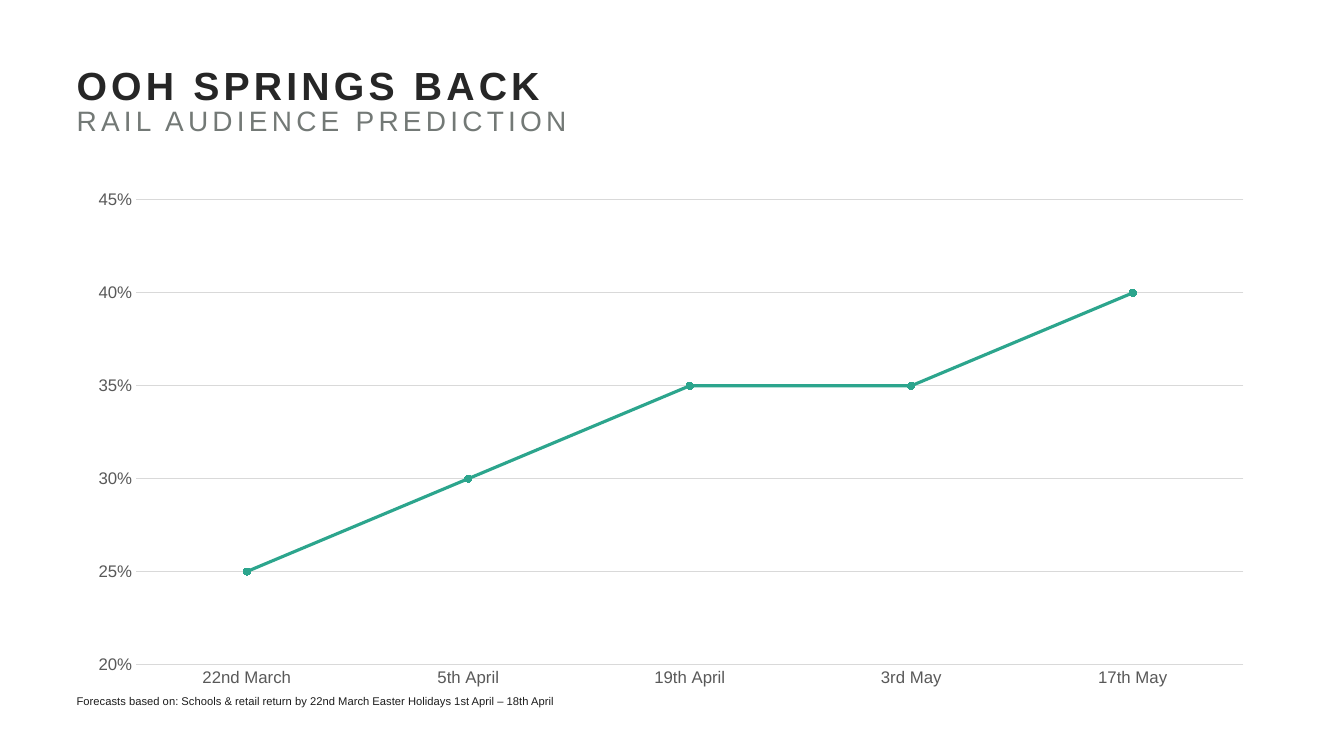
from lxml import etree
from pptx import Presentation
from pptx.chart.data import CategoryChartData
from pptx.dml.color import RGBColor
from pptx.enum.chart import XL_CHART_TYPE, XL_MARKER_STYLE, XL_TICK_MARK
from pptx.enum.text import MSO_ANCHOR, MSO_AUTO_SIZE, PP_ALIGN
from pptx.oxml import parse_xml
from pptx.oxml.ns import nsdecls, qn
from pptx.util import Inches, Pt

LINE_MARKERS = XL_CHART_TYPE.LINE_MARKERS
CIRCLE = XL_MARKER_STYLE.CIRCLE
NO_TICKS = XL_TICK_MARK.NONE
TOP = MSO_ANCHOR.TOP
NO_AUTOFIT = MSO_AUTO_SIZE.NONE
LEFT_ALIGN = PP_ALIGN.LEFT

FONT = "Arial"
TEAL = "2CA58D"
GRID_GREY = "D9D9D9"
AXIS_GREY = "595959"
LEFT, WIDTH = 0.76, 11.81

FORECAST = {
    "22nd March": 0.25,
    "5th April": 0.3,
    "19th April": 0.35,
    "3rd May": 0.35,
    "17th May": 0.4,
}
PLOT_AREA = {"x": 0.05, "y": 0.04, "w": 0.93, "h": 0.9}


def rgb(color):
    return RGBColor.from_string(color)


def format_font(font, size, color, bold=False):
    values = {"name": FONT, "size": Pt(size), "bold": bold}
    for name, value in values.items():
        setattr(font, name, value)
    font.color.rgb = rgb(color)


def format_line(line, color, width):
    line.color.rgb = rgb(color)
    line.width = Pt(width)


def place_placeholder(shape, top, height, line_spacing):
    """Move a placeholder, remove its insets and return its first paragraph."""
    bounds = {"left": LEFT, "top": top, "width": WIDTH, "height": height}
    for name, value in bounds.items():
        setattr(shape, name, Inches(value))
    frame = shape.text_frame
    frame_format = {
        "margin_left": 0, "margin_right": 0, "margin_top": 0, "margin_bottom": 0,
        "vertical_anchor": TOP, "word_wrap": True, "auto_size": NO_AUTOFIT,
    }
    for name, value in frame_format.items():
        setattr(frame, name, value)
    paragraph = frame.paragraphs[0]
    paragraph.alignment = LEFT_ALIGN
    paragraph.line_spacing = line_spacing
    paragraph.space_before = Pt(0)
    return paragraph


def add_run(paragraph, text, size, color, bold=False, spacing=0):
    run = paragraph.add_run()
    run.text = text
    format_font(run.font, size, color, bold)
    if spacing:
        run.font._element.set("spc", str(spacing * 100))


def add_title(slide):
    paragraph = place_placeholder(slide.shapes.title, 0.68, 1.1, 0.85)
    add_run(paragraph, "OOH SPRINGS BACK", 28, "262626", bold=True, spacing=3)
    paragraph.add_line_break()
    add_run(paragraph, "RAIL AUDIENCE PREDICTION", 20, "737976", spacing=3)


def add_footnote(slide):
    paragraph = place_placeholder(slide.placeholders[1], 6.9, 0.39, 0.9)
    properties = paragraph._p.get_or_add_pPr()
    properties.set("marL", "0")
    properties.set("indent", "0")
    etree.SubElement(properties, qn("a:buNone"))
    add_run(
        paragraph,
        "Forecasts based on: Schools & retail return by 22nd March "
        "Easter Holidays 1st April – 18th April",
        8, "1C1C1C",
    )


def format_axis(axis):
    axis.major_tick_mark = NO_TICKS
    axis.minor_tick_mark = NO_TICKS
    format_font(axis.tick_labels.font, 12, AXIS_GREY)


def set_plot_area(chart):
    """Fix the inner plot area as fractions of the chart."""
    modes = '<c:xMode val="edge"/><c:yMode val="edge"/>'
    sizes = "".join(f'<c:{name} val="{value}"/>' for name, value in PLOT_AREA.items())
    layout = parse_xml(
        f'<c:layout {nsdecls("c")}><c:manualLayout>'
        f'<c:layoutTarget val="inner"/>{modes}{sizes}'
        "</c:manualLayout></c:layout>"
    )
    plot_area = chart._chartSpace.chart.plotArea
    for old_layout in plot_area.findall(qn("c:layout")):
        plot_area.remove(old_layout)
    plot_area.insert(0, layout)


def add_forecast_chart(slide):
    data = CategoryChartData(number_format="0%")
    data.categories = list(FORECAST)
    data.add_series("Series 1", list(FORECAST.values()))
    chart = slide.shapes.add_chart(
        LINE_MARKERS, Inches(LEFT), Inches(1.78), Inches(WIDTH), Inches(5.12), data
    ).chart
    chart.has_legend = False
    chart.has_title = False
    format_font(chart.font, 10, "000000")
    set_plot_area(chart)

    format_axis(chart.category_axis)
    format_line(chart.category_axis.format.line, GRID_GREY, 0.75)

    value_axis = chart.value_axis
    format_axis(value_axis)
    value_axis.format.line.fill.background()
    value_axis.minimum_scale = 0.2
    value_axis.maximum_scale = 0.45
    value_axis.major_unit = 0.05
    value_axis.has_major_gridlines = True
    format_line(value_axis.major_gridlines.format.line, GRID_GREY, 0.75)
    value_axis.tick_labels.number_format = "0%"
    value_axis.tick_labels.number_format_is_linked = False

    chart.plots[0].vary_by_categories = False
    series = chart.plots[0].series[0]
    series.smooth = False
    format_line(series.format.line, TEAL, 2.25)
    marker = series.marker
    marker.style = CIRCLE
    marker.size = 5
    marker.format.fill.solid()
    marker.format.fill.fore_color.rgb = rgb(TEAL)
    format_line(marker.format.line, TEAL, 0.75)


def main():
    presentation = Presentation()
    presentation.slide_width = Inches(13.33)
    presentation.slide_height = Inches(7.5)
    slide = presentation.slides.add_slide(presentation.slide_layouts[1])
    add_title(slide)
    add_forecast_chart(slide)
    add_footnote(slide)
    presentation.save("out.pptx")


if __name__ == "__main__":
    main()
